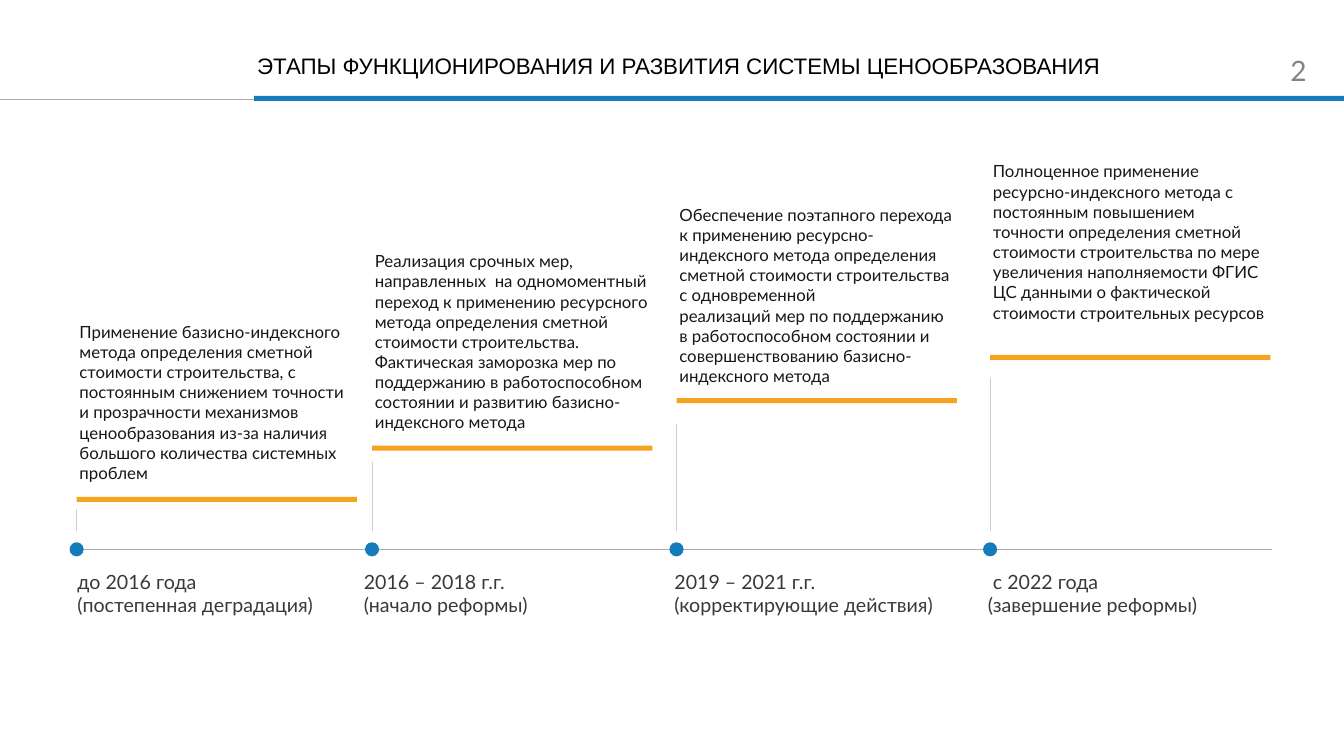
from pptx import Presentation
from pptx.dml.color import RGBColor
from pptx.enum.shapes import MSO_CONNECTOR, MSO_SHAPE
from pptx.enum.text import MSO_ANCHOR, PP_ALIGN
from pptx.oxml.ns import qn
from pptx.util import Inches, Pt
from lxml import etree

STRAIGHT = MSO_CONNECTOR.STRAIGHT
RECTANGLE = MSO_SHAPE.RECTANGLE
OVAL = MSO_SHAPE.OVAL
TOP = MSO_ANCHOR.TOP
LEFT = PP_ALIGN.LEFT

BLUE = RGBColor(0x13, 0x7C, 0xBA)
ORANGE = RGBColor(0xF6, 0xA3, 0x20)
HEADER_GRAY = RGBColor(0xA7, 0xA9, 0xAC)
AXIS_GRAY = RGBColor(0xAF, 0xAB, 0xAB)
STEM_GRAY = RGBColor(0xD0, 0xCE, 0xCE)
NUMBER_GRAY = RGBColor(0x81, 0x83, 0x85)
LABEL_GRAY = RGBColor(0x3B, 0x38, 0x38)
TEXT_BLACK = RGBColor(0x18, 0x17, 0x17)
BLACK = RGBColor(0x00, 0x00, 0x00)

AXIS_TOP = 5.45
STEM_BOTTOM = 5.27
LABEL_TOP = 5.6
BAR_WIDTH = 2.78
BAR_HEIGHT = 0.05
DOT_SIZE = 0.14

presentation = Presentation()
presentation.slide_width = Inches(13.33)
presentation.slide_height = Inches(7.5)
slide = presentation.slides.add_slide(presentation.slide_layouts[5])
shapes = slide.shapes


def place_text(shape, box, text, size, color, font_name="Lato", wrap=True):
    shape.left, shape.top, shape.width, shape.height = map(Inches, box)
    frame = shape.text_frame
    frame.word_wrap = wrap
    frame.vertical_anchor = TOP
    frame.text = text
    for paragraph in frame.paragraphs:
        paragraph.alignment = LEFT
        paragraph.font.size = Pt(size)
        paragraph.font.name = font_name
        paragraph.font.color.rgb = color


def add_filled(kind, left, top, width, height, color):
    shape = shapes.add_shape(kind, Inches(left), Inches(top), Inches(width), Inches(height))
    shape.shadow.inherit = False
    shape.fill.solid()
    shape.fill.fore_color.rgb = color
    shape.line.fill.background()


stages = [
    {
        "x": 0.76, "bar_top": 4.93, "stem_top": 5.05,
        "text_top": 3.14, "text_size": (3.17, 1.72),
        "label_left": 0.67, "label_width": 2.63,
        "label": "до 2016 года\n(постепенная деградация)",
        "text": "Применение базисно-индексного метода определения сметной "
                "стоимости строительства, с постоянным снижением точности\v"
                "и прозрачности механизмов ценообразования из-за наличия "
                "большого количества системных проблем",
    },
    {
        "x": 3.69, "bar_top": 4.42, "stem_top": 4.58,
        "text_top": 2.44, "text_size": (2.93, 1.92),
        "label_left": 3.51, "label_width": 1.89,
        "label": "2016 – 2018 г.г.\n(начало реформы)",
        "text": "Реализация срочных мер, направленных  на одномоментный переход "
                "к применению ресурсного метода определения сметной стоимости "
                "строительства.\n"
                "Фактическая заморозка мер по поддержанию в работоспособном "
                "состоянии и развитию базисно-индексного метода",
    },
    {
        "x": 6.71, "bar_top": 3.95, "stem_top": 4.21,
        "text_top": 1.98, "text_size": (2.93, 1.92),
        "label_left": 6.59, "label_width": 2.78,
        "label": "2019 – 2021 г.г.\n(корректирующие действия)",
        "text": "Обеспечение поэтапного перехода к применению "
                "ресурсно-индексного метода определения сметной стоимости "
                "строительства с одновременной\n"
                "реализаций мер по поддержанию в работоспособном состоянии и "
                "совершенствованию базисно-индексного метода",
    },
    {
        "x": 9.82, "bar_top": 3.52, "stem_top": 3.75,
        "text_top": 1.55, "text_size": (2.93, 1.72),
        "label_left": 9.7, "label_width": 2.36,
        "label": " с 2022 года\n(завершение реформы)",
        "text": "Полноценное применение ресурсно-индексного метода с постоянным "
                "повышением точности определения сметной стоимости строительства "
                "по мере увеличения наполняемости ФГИС ЦС данными о фактической "
                "стоимости строительных ресурсов",
    },
]

lines = [
    (0, 0.99, 2.59, 0.99, HEADER_GRAY),
    (0.76, AXIS_TOP, 12.62, AXIS_TOP, AXIS_GRAY),
]
for stage in stages:
    lines.append((stage["x"], STEM_BOTTOM, stage["x"], stage["stem_top"], STEM_GRAY))

for *ends, color in lines:
    connector = shapes.add_connector(STRAIGHT, *map(Inches, ends))
    connector.line.color.rgb = color
    connector.line.width = Pt(0.5)
    etree.SubElement(connector._element.spPr, qn("a:effectLst"))

add_filled(RECTANGLE, 2.52, 0.95, 10.81, 0.05, BLUE)
place_text(shapes.title, (2.45, 0.47, 8.66, 0.37),
           "ЭТАПЫ ФУНКЦИОНИРОВАНИЯ И РАЗВИТИЯ СИСТЕМЫ ЦЕНООБРАЗОВАНИЯ",
           16, BLACK, "Arial", wrap=False)
place_text(shapes.add_textbox(0, 0, 0, 0), (12.7, 0.48, 0.33, 0.44), "2", 20, NUMBER_GRAY)

for stage in stages:
    x = stage["x"]
    dot_left = x - DOT_SIZE / 2
    add_filled(RECTANGLE, x, stage["bar_top"], BAR_WIDTH, BAR_HEIGHT, ORANGE)
    add_filled(OVAL, dot_left, AXIS_TOP - DOT_SIZE / 2, DOT_SIZE, DOT_SIZE, BLUE)
    place_text(shapes.add_textbox(0, 0, 0, 0),
               (dot_left, stage["text_top"], *stage["text_size"]),
               stage["text"], 12, TEXT_BLACK)
    place_text(shapes.add_textbox(0, 0, 0, 0),
               (stage["label_left"], LABEL_TOP, stage["label_width"], 0.57),
               stage["label"], 14, LABEL_GRAY)

presentation.save("out.pptx")
